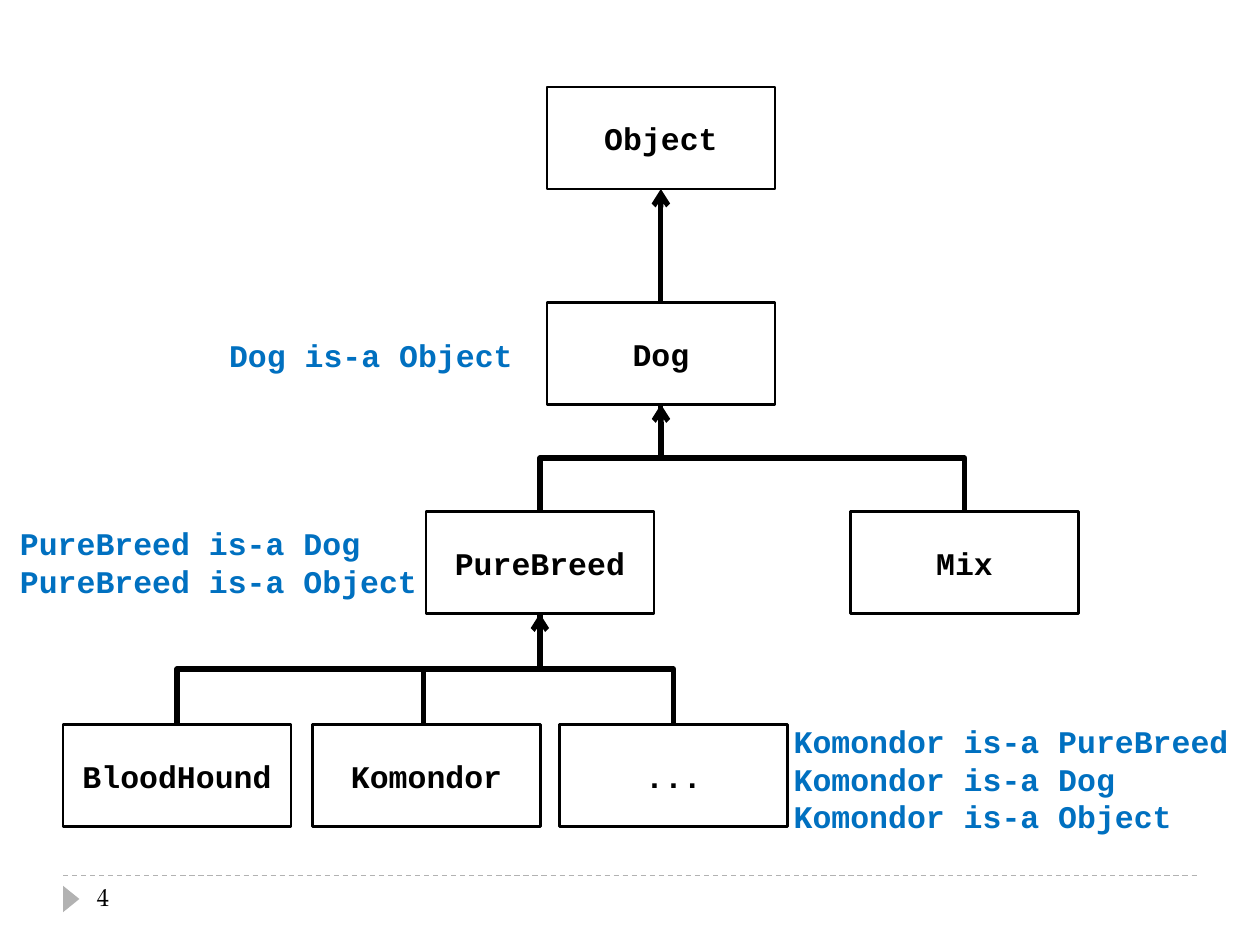
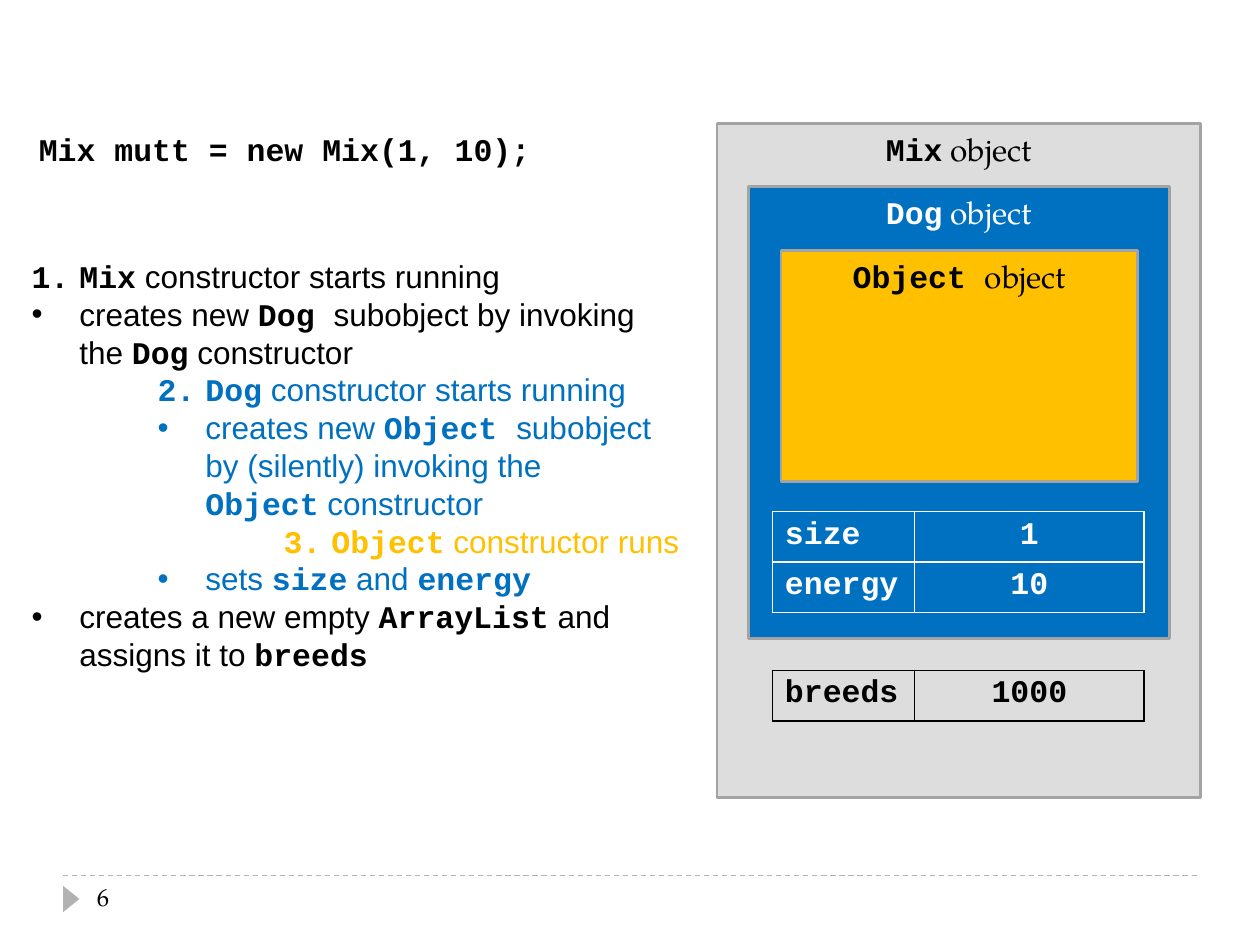
from dataclasses import dataclass

from pptx import Presentation
from pptx.dml.color import RGBColor
from pptx.enum.dml import MSO_LINE_DASH_STYLE as Dash
from pptx.enum.shapes import MSO_CONNECTOR as Connector, MSO_SHAPE as Shape
from pptx.enum.text import MSO_ANCHOR as Anchor, MSO_AUTO_SIZE as AutoSize, PP_ALIGN as Align
from pptx.oxml.ns import qn
from pptx.oxml.xmlchemy import OxmlElement
from pptx.util import Pt


@dataclass(frozen=True)
class Theme:
    black: str = "000000"
    white: str = "FFFFFF"
    blue: str = "0070C0"
    amber: str = "FFC000"
    panel: str = "DDDDDD"
    panel_edge: str = "A3A3A3"
    footer: str = "B2B2B2"
    code: str = "Courier New"
    sans: str = "Arial"
    serif: str = "TeX Gyre Pagella"
    text_size: int = 18
    number_size: int = 14
    box_line: float = 1.5
    arrow_line: float = 3
    footer_line: float = 0.75
    border: int = 1


THEME = Theme()
SCALE = 9144
BLANK_LAYOUT, LIST_LAYOUT = 6, 1
BOX_WIDTH, BOX_HEIGHT = 181, 81
ROW_HEIGHT, COLUMN_WIDTHS = 38, (113, 182)
INDENT = 38

CLASS_BOXES = {
    "...": (444, 575),
    "Komondor": (248, 575),
    "BloodHound": (50, 575),
    "PureBreed": (338, 406),
    "Mix": (675, 406),
    "Dog": (434, 240),
    "Object": (434, 69),
}
INHERITANCE = [
    ("Object", "Dog", True),
    ("Dog", "Mix", True),
    ("Dog", "PureBreed", False),
    ("PureBreed", "BloodHound", False),
    ("PureBreed", "...", True),
]
IS_A_NOTES = [
    ((172, 262, 250, 40), ["`Dog is-a Object`"]),
    ((6, 411, 345, 71), ["`PureBreed is-a Dog`", "`PureBreed is-a Object`"]),
    ((620, 568, 378, 101),
     ["`Komondor is-a PureBreed`", "`Komondor is-a Dog`", "`Komondor is-a Object`"]),
]
OBJECT_PANELS = [
    ((569, 98, 384, 535), "`Mix` object", THEME.panel, THEME.black),
    ((594, 148, 334, 359), "`Dog` object", THEME.blue, THEME.white),
    ((620, 199, 283, 183), "`Object `object", THEME.amber, THEME.black),
]
CONSTRUCTOR_STEPS = [
    (0, 1, "`Mix` constructor starts running", THEME.black),
    (0, None, "creates new `Dog `subobject by invoking\nthe `Dog` constructor", THEME.black),
    (2, 2, "`Dog` constructor starts running", THEME.blue),
    (2, None, "creates new `Object `subobject\nby (silently) invoking the\n"
              "`Object` constructor", THEME.blue),
    (4, 3, "`Object` constructor runs", THEME.amber),
    (2, None, "sets `size` and `energy`", THEME.blue),
    (0, None, "creates a new empty `ArrayList` and\nassigns it to `breeds`", THEME.black),
]


def emu(*lengths):
    return [round(length * SCALE) for length in lengths]


def rgb(color):
    return RGBColor.from_string(color)


def add_element(parent, tag, **attributes):
    element = OxmlElement(tag)
    for name, value in attributes.items():
        element.set(name, str(value))
    parent.append(element)
    return element


class Deck:
    """Holds the theme and the current slide, and draws each kind of element."""

    def __init__(self, theme):
        self.theme = theme
        self.presentation = Presentation()
        self.presentation.slide_width, self.presentation.slide_height = emu(1000, 750)
        self.slide = None

    def add_slide(self, layout, number):
        theme = self.theme
        self.slide = self.presentation.slides.add_slide(self.presentation.slide_layouts[layout])
        if self.slide.shapes.title is not None:
            title = self.slide.shapes.title.element
            title.getparent().remove(title)
        rule = self.line((50, 695), (950, 695), theme.footer, theme.footer_line)
        rule.line.dash_style = Dash.DASH
        marker = self.shape((46, 707, 21, 13), theme.footer, kind=Shape.ISOSCELES_TRIANGLE)
        marker.rotation = 90
        self.text((67, 695, 217, 40), [str(number)], theme.black, theme.number_size)

    def set_text(self, paragraph, text, color, size=None, plain=None, align=None):
        theme = self.theme
        paragraph.alignment = align
        paragraph.font.size = Pt(size or theme.text_size)
        paragraph.font.color.rgb = rgb(color)
        spans = [(span, index % 2 == 1) for index, span in enumerate(text.split("`")) if span]
        for span, is_code in spans:
            for index, piece in enumerate(span.split("\n")):
                if index:
                    paragraph.add_line_break()
                if not piece:
                    continue
                run = paragraph.add_run()
                run.text = piece
                font = paragraph.font if len(spans) == 1 else run.font
                font.name = theme.code if is_code else plain or theme.serif
                font.bold = is_code

    def text(self, bounds, lines, color, size=None):
        frame = self.slide.shapes.add_textbox(*emu(*bounds)).text_frame
        frame.word_wrap = True
        for index, line in enumerate(lines):
            paragraph = frame.add_paragraph() if index else frame.paragraphs[0]
            self.set_text(paragraph, line, color, size)

    def shape(self, bounds, fill=None, edge=None, kind=Shape.RECTANGLE):
        shape = self.slide.shapes.add_shape(kind, *emu(*bounds))
        shape.shadow.inherit = False
        if fill:
            shape.fill.solid()
            shape.fill.fore_color.rgb = rgb(fill)
        else:
            shape.fill.background()
        if edge:
            shape.line.color.rgb = rgb(edge)
            shape.line.width = Pt(self.theme.box_line)
        else:
            shape.line.fill.background()
        return shape

    def box(self, bounds, label, color, fill=None, edge=None, anchor=Anchor.MIDDLE):
        frame = self.shape(bounds, fill, edge).text_frame
        frame.vertical_anchor = anchor
        self.set_text(frame.paragraphs[0], label, color, align=Align.CENTER)

    def line(self, start, end, color, width, arrow=False, kind=Connector.STRAIGHT):
        connector = self.slide.shapes.add_connector(kind, *emu(*start, *end))
        connector.line.color.rgb = rgb(color)
        connector.line.width = Pt(width)
        properties = connector.element.spPr
        if arrow:
            add_element(properties.find(qn("a:ln")), "a:headEnd", type="arrow")
        add_element(properties, "a:effectLst")
        return connector

    def inherit(self, parent, child, arrow):
        """Link two class boxes by a line that leaves the parent downwards."""
        theme = self.theme
        start_x, start_y = parent[0] + BOX_WIDTH / 2, parent[1] + BOX_HEIGHT
        end_x, end_y = child[0] + BOX_WIDTH / 2, child[1]
        if start_x == end_x:
            self.line((start_x, start_y), (end_x, end_y), theme.black, theme.arrow_line, arrow)
            return
        to_right = end_x > start_x
        middle_x, middle_y = (start_x + end_x) / 2, (start_y + end_y) / 2
        half_x = (end_y - start_y) / 2 * (1 if to_right else -1)
        half_y = abs(end_x - start_x) / 2
        connector = self.line((middle_x + half_x, middle_y - half_y),
                              (middle_x - half_x, middle_y + half_y),
                              theme.black, theme.arrow_line, arrow, Connector.ELBOW)
        connector.element.spPr.xfrm.set("rot", str((270 if to_right else 90) * 60000))

    def table(self, left, top, rows, color):
        bounds = emu(left, top, sum(COLUMN_WIDTHS), ROW_HEIGHT * len(rows))
        table = self.slide.shapes.add_table(len(rows), len(COLUMN_WIDTHS), *bounds).table
        table.first_row = table.horz_banding = False
        for column, width in zip(table.columns, emu(*COLUMN_WIDTHS)):
            column.width = width
        for row_index, row in enumerate(rows):
            for column_index, value in enumerate(row):
                cell = table.cell(row_index, column_index)
                align = Align.CENTER if column_index else Align.LEFT
                self.set_text(cell.text_frame.paragraphs[0], f"`{value}`", color, align=align)
                self.borders(cell, color)
                cell.fill.background()

    def borders(self, cell, color):
        properties = cell._tc.get_or_add_tcPr()
        for side in "LRTB":
            border = add_element(properties, f"a:ln{side}", w=Pt(self.theme.border))
            add_element(add_element(border, "a:solidFill"), "a:srgbClr", val=color)

    def steps(self, bounds, steps):
        body = self.slide.placeholders[1]
        body.left, body.top, body.width, body.height = emu(*bounds)
        frame = body.text_frame
        frame.word_wrap = True
        frame.auto_size = AutoSize.NONE
        for index, (level, number, text, color) in enumerate(steps):
            paragraph = frame.add_paragraph() if index else frame.paragraphs[0]
            paragraph.level = level
            paragraph.space_before = Pt(0)
            self.set_text(paragraph, text, color, plain=self.theme.sans)
            self.bullet(paragraph, level, number)

    def bullet(self, paragraph, level, number):
        properties = paragraph._p.get_or_add_pPr()
        margin, hanging = emu(INDENT + level * 50, -INDENT)
        properties.set("marL", str(margin))
        properties.set("indent", str(hanging))
        if number:
            add_element(properties, "a:buFontTx")
            add_element(properties, "a:buAutoNum", type="arabicPeriod", startAt=number)
        else:
            add_element(properties, "a:buFont", typeface=self.theme.sans)
            add_element(properties, "a:buChar", char="•")
        properties.append(properties.find(qn("a:defRPr")))


def add_hierarchy(deck):
    theme = deck.theme
    deck.add_slide(BLANK_LAYOUT, 4)
    for name, corner in CLASS_BOXES.items():
        deck.box((*corner, BOX_WIDTH, BOX_HEIGHT), f"`{name}`", theme.black, edge=theme.black)
    for parent, child, arrow in INHERITANCE:
        deck.inherit(CLASS_BOXES[parent], CLASS_BOXES[child], arrow)
    deck.line((336, 531), (336, 575), theme.black, theme.arrow_line)
    for bounds, lines in IS_A_NOTES:
        deck.text(bounds, lines, theme.blue)


def add_construction(deck):
    theme = deck.theme
    deck.add_slide(LIST_LAYOUT, 6)
    for bounds, label, fill, color in OBJECT_PANELS:
        deck.box(bounds, label, color, fill, theme.panel_edge, Anchor.TOP)
    deck.table(613, 406, [("size", "1"), ("energy", "10")], theme.white)
    deck.table(613, 532, [("breeds", "1000")], theme.black)
    deck.text((21, 98, 420, 40), ["`Mix mutt = new Mix(1, 10);`"], theme.black)
    deck.steps((15, 199, 558, 343), CONSTRUCTOR_STEPS)


def main():
    deck = Deck(THEME)
    add_hierarchy(deck)
    add_construction(deck)
    deck.presentation.save("out.pptx")


if __name__ == "__main__":
    main()
